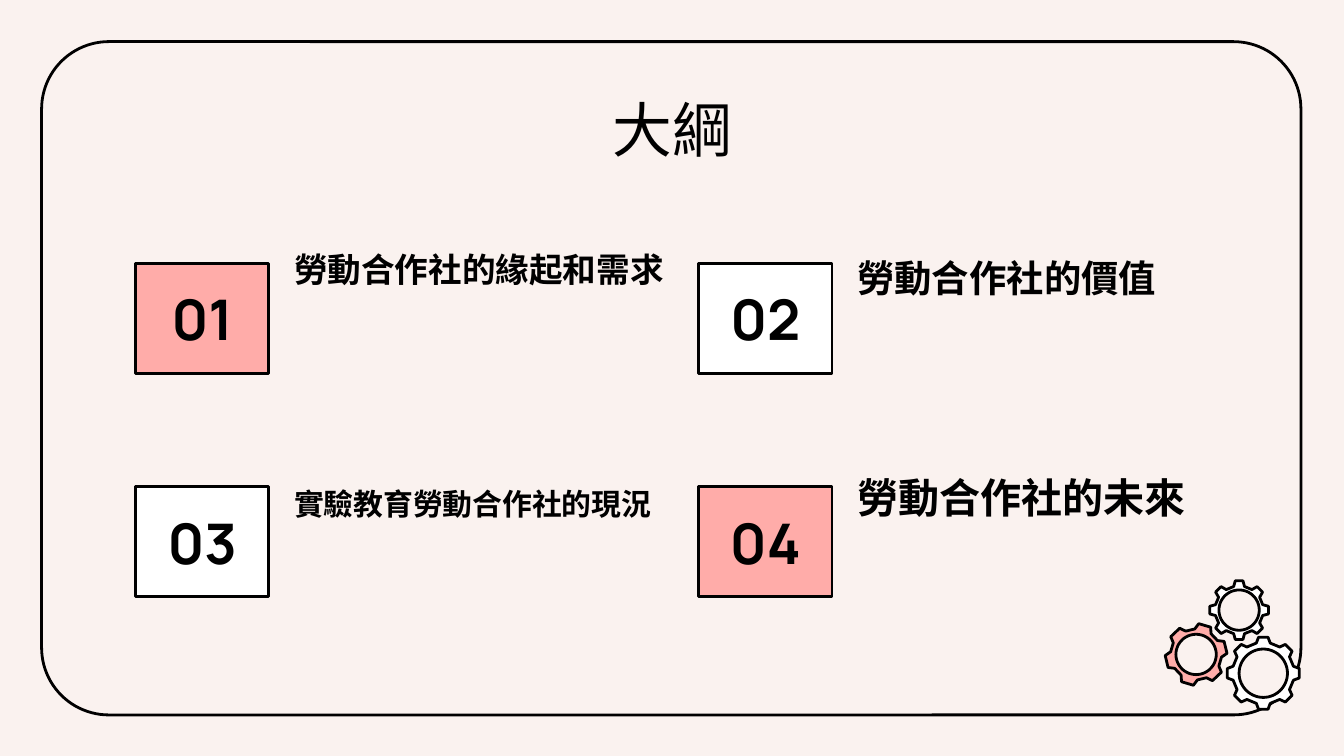
from dataclasses import dataclass
from math import cos, radians, sin

from pptx import Presentation
from pptx import util as u
from pptx.dml.color import RGBColor
from pptx.enum import shapes, text

BLACK = RGBColor(0x00, 0x00, 0x00)
WHITE = RGBColor(0xFF, 0xFF, 0xFF)
PINK = RGBColor(0xFF, 0xAC, 0xA9)
CREAM = RGBColor(0xFA, 0xF2, 0xEF)
FONT = "Manrope"


@dataclass(frozen=True)
class Topic:
    number: str
    heading: str
    size: int
    column: int
    row: int
    fill: RGBColor
    top: float
    width: float
    height: float


@dataclass(frozen=True)
class Gear:
    x: float
    y: float
    outer: float
    root: float
    hole: float
    teeth: int
    turn: float
    tip_angle: float
    root_angle: float
    fill: RGBColor


TOPICS = [
    Topic("01", "勞動合作社的緣起和需求", 18, 0, 0, PINK, 1.86, 3.03, 0.39),
    Topic("02", "勞動合作社的價值", 20, 1, 0, WHITE, 1.89, 2.94, 0.44),
    Topic("03", "實驗教育勞動合作社的現況", 16, 0, 1, WHITE, 3.54, 3.03, 0.44),
    Topic("04", "勞動合作社的未來", 22, 1, 1, PINK, 3.54, 2.71, 0.44),
]
GEARS = [
    Gear(9.4, 5.01, 0.27, 0.23, 0.18, 8, 0, 7.5, 13, WHITE),
    Gear(8.9, 4.87, 0.23, 0.19, 0.15, 6, 16.5, 11.5, 19.5, PINK),
    Gear(9.22, 4.54, 0.22, 0.18, 0.15, 8, 0, 7.5, 13, WHITE),
]


def outline(shape) -> None:
    shape.shadow.inherit = False
    shape.line.color.rgb = BLACK
    shape.line.width = u.Pt(1.5)


def write(shape, words: str, size: int, bold: bool, align, anchor) -> None:
    frame = shape.text_frame
    frame.text = words
    frame.word_wrap = True
    frame.auto_size = text.MSO_AUTO_SIZE.NONE
    frame.vertical_anchor = anchor
    frame.margin_left = frame.margin_right = u.Inches(0.1)
    frame.margin_top = frame.margin_bottom = u.Inches(0.1)
    para = frame.paragraphs[0]
    para.alignment = align
    font = para.runs[0].font
    font.name = FONT
    font.size = u.Pt(size)
    font.bold = bold
    font.color.rgb = BLACK


def add_topic(page, topic: Topic) -> None:
    left = 1.01 + 4.19 * topic.column
    box = page.shapes.add_shape(
        shapes.MSO_SHAPE.RECTANGLE,
        u.Inches(left), u.Inches(1.96 + 1.66 * topic.row),
        u.Inches(0.99), u.Inches(0.82),
    )
    box.fill.solid()
    box.fill.fore_color.rgb = topic.fill
    outline(box)
    write(box, topic.number, 30, True, text.PP_ALIGN.CENTER, text.MSO_ANCHOR.MIDDLE)
    heading = page.shapes.add_textbox(
        u.Inches(left + 1.08), u.Inches(topic.top),
        u.Inches(topic.width), u.Inches(topic.height),
    )
    write(heading, topic.heading, topic.size, True,
          text.PP_ALIGN.LEFT, text.MSO_ANCHOR.BOTTOM)


def add_gear(page, gear: Gear) -> None:
    def point(radius: float, angle: float) -> tuple[int, int]:
        turn = radians(angle)
        return (u.Inches(gear.x + radius * sin(turn)),
                u.Inches(gear.y - radius * cos(turn)))

    corners = [(gear.root, -gear.root_angle), (gear.outer, -gear.tip_angle),
               (gear.outer, gear.tip_angle), (gear.root, gear.root_angle)]
    rim = [point(radius, gear.turn + 360 / gear.teeth * tooth + offset)
           for tooth in range(gear.teeth) for radius, offset in corners]
    hole = [point(gear.hole, angle) for angle in range(0, 360, 6)]
    builder = page.shapes.build_freeform(*rim[0])
    builder.add_line_segments(rim[1:], close=True)
    builder.move_to(*hole[0])
    builder.add_line_segments(hole[1:], close=True)
    shape = builder.convert_to_shape()
    shape.fill.solid()
    shape.fill.fore_color.rgb = gear.fill
    outline(shape)


def main() -> None:
    deck = Presentation()
    deck.slide_width = u.Inches(10)
    deck.slide_height = deck.slide_width * 9 // 16
    page = deck.slides.add_slide(deck.slide_layouts[5])
    page.background.fill.solid()
    page.background.fill.fore_color.rgb = CREAM

    title = page.shapes.title
    title.left, title.top = u.Inches(0.79), u.Inches(0.59)
    title.width, title.height = u.Inches(8.43), u.Inches(0.63)
    write(title, "大綱", 32, False, text.PP_ALIGN.CENTER, text.MSO_ANCHOR.TOP)

    border = page.shapes.add_shape(
        shapes.MSO_SHAPE.ROUNDED_RECTANGLE,
        u.Inches(0.31), u.Inches(0.31), u.Inches(9.37), u.Inches(5.01),
    )
    border.adjustments[0] = 0.1
    border.fill.background()
    outline(border)

    for topic in TOPICS:
        add_topic(page, topic)
    for gear in GEARS:
        add_gear(page, gear)
    deck.save("out.pptx")


if __name__ == "__main__":
    main()
